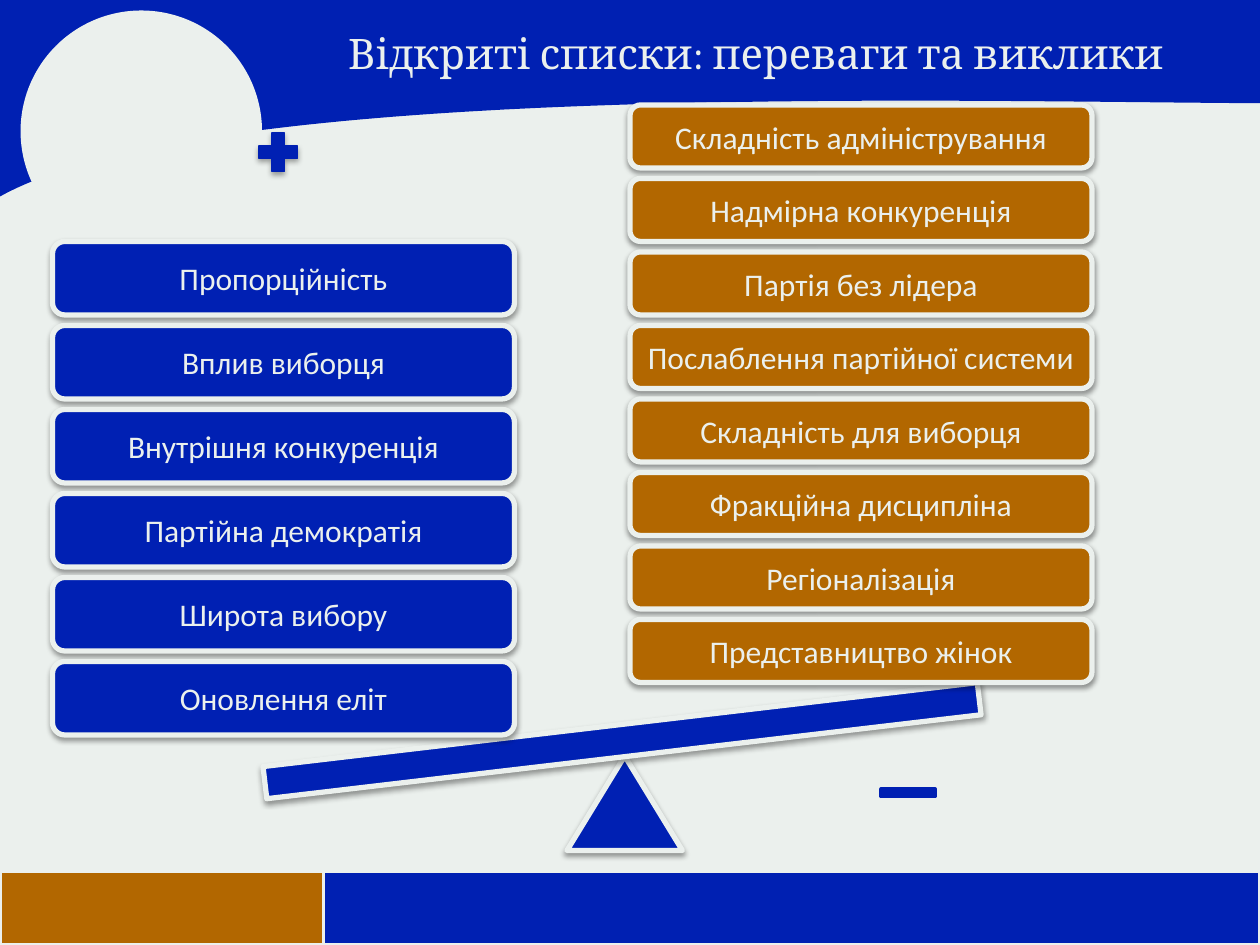
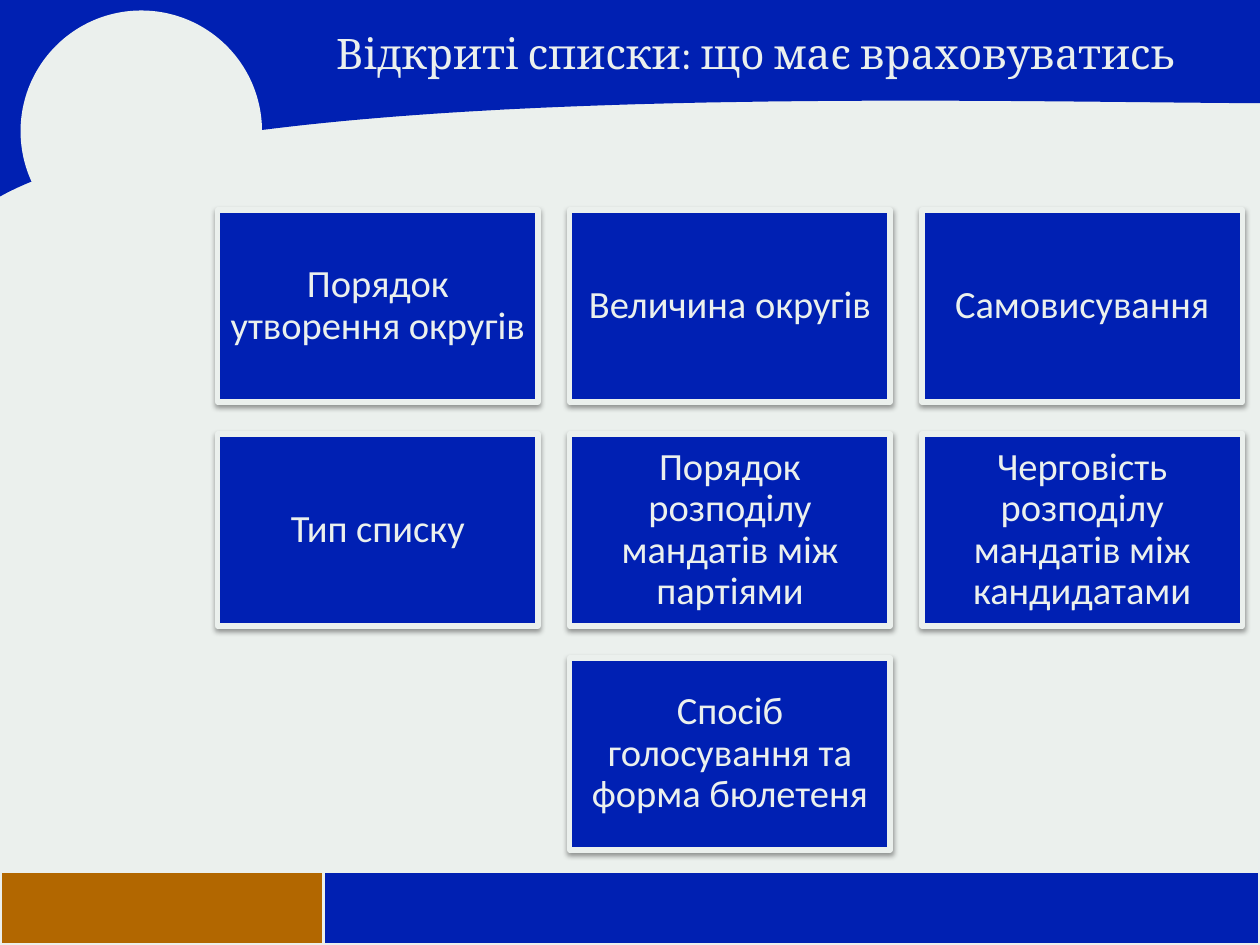
from lxml import etree
from pptx import Presentation
from pptx import util as u
from pptx.dml.color import RGBColor
from pptx.enum import shapes, text
from pptx.oxml.ns import qn

Pt = u.Pt
KIND = shapes.MSO_SHAPE

COLORS = {
    "paper": "EBF0ED",
    "band": "0020B2",
    "blue": "0020B3",
    "ochre": "B26700",
    "shadow": "000000",
}
TITLE_FONT, BODY_FONT = "Cambria", "Calibri"
WIDTH, HEIGHT = 720, 540

BALANCE_TITLE = "Відкриті списки: переваги та виклики"
ADVANTAGES = [
    "Пропорційність",
    "Вплив виборця",
    "Внутрішня конкуренція",
    "Партійна демократія",
    "Широта вибору",
    "Оновлення еліт",
]
CHALLENGES = [
    "Складність адміністрування",
    "Надмірна конкуренція",
    "Партія без лідера",
    "Послаблення партійної системи",
    "Складність для виборця",
    "Фракційна дисципліна",
    "Регіоналізація",
    "Представництво жінок",
]

FACTORS_TITLE = "Відкриті списки: що має враховуватись"
FACTOR_ROWS = [
    ["Порядок утворення округів", "Величина округів", "Самовисування"],
    ["Тип списку", "Порядок розподілу мандатів між партіями",
     "Черговість розподілу мандатів між кандидатами"],
    ["Спосіб голосування та форма бюлетеня"],
]


def rgb(name):
    return RGBColor.from_string(COLORS[name])


def paint(shape, fill, line=None, weight=0):
    shape.shadow.inherit = False
    shape.fill.solid()
    shape.fill.fore_color.rgb = rgb(fill)
    if line:
        shape.line.color.rgb = rgb(line)
        shape.line.width = Pt(weight)
    else:
        shape.line.fill.background()
    return shape


def add_block(slide, kind, box, fill, line=None, weight=0):
    shape = slide.shapes.add_shape(kind, *map(Pt, box))
    return paint(shape, fill, line, weight)


def cast_shadow(shape, alpha=38, distance=1.6):
    effects = shape._element.spPr.find(qn("a:effectLst"))
    outer = etree.SubElement(
        effects, qn("a:outerShdw"), blurRad=str(Pt(3.1)),
        dist=str(Pt(distance)), dir="5400000", rotWithShape="0")
    color = etree.SubElement(outer, qn("a:srgbClr"), val=COLORS["shadow"])
    etree.SubElement(color, qn("a:alpha"), val=str(alpha * 1000))
    return shape


def add_raised(slide, kind, box, fill):
    return cast_shadow(add_block(slide, kind, box, fill, "paper", 3))


def write(shape, words, font, size, spacing=None):
    frame = shape.text_frame
    frame.word_wrap = True
    frame.vertical_anchor = text.MSO_ANCHOR.MIDDLE
    paragraph = frame.paragraphs[0]
    paragraph.text = words
    paragraph.alignment = text.PP_ALIGN.CENTER
    if spacing:
        paragraph.line_spacing = spacing
    paragraph.font.name = font
    paragraph.font.size = Pt(size)
    paragraph.font.color.rgb = rgb("paper")


def add_header(slide):
    start, pull_a, pull_b, end = (720, 59), (551.5, 58.3), (120.2, 45.4), (0, 112.3)
    steps = 80
    curve = []
    for step in range(steps + 1):
        t = step / steps
        s = 1 - t
        curve.append(tuple(
            Pt(s**3 * a + 3 * s * s * t * b + 3 * s * t * t * c + t**3 * d)
            for a, b, c, d in zip(start, pull_a, pull_b, end)))
    outline = slide.shapes.build_freeform(0, 0)
    outline.add_line_segments([(Pt(WIDTH), 0)] + curve, close=True)
    paint(outline.convert_to_shape(), "band")


def add_themed_slide(deck, title):
    slide = deck.slides.add_slide(deck.slide_layouts[6])
    slide.background.fill.solid()
    slide.background.fill.fore_color.rgb = rgb("paper")
    add_block(slide, KIND.RECTANGLE, (0, 498, 185.5, 42), "ochre", "paper", 2)
    add_block(slide, KIND.RECTANGLE, (185, 498, 535, 42), "band", "paper", 2)
    add_header(slide)
    add_block(slide, KIND.OVAL, (11.75, 6, 138, 138), "paper")
    heading = slide.shapes.add_textbox(*map(Pt, (156, -12, 552, 84)))
    write(heading, title, TITLE_FONT, 24)
    return slide


def add_stack(slide, items, left, top, height, fill):
    for index, item in enumerate(items):
        box = (left, top + index * (height + 6), 264, height)
        plate = add_raised(slide, KIND.ROUNDED_RECTANGLE, box, fill)
        write(plate, item, BODY_FONT, 18)


def build_balance(deck):
    slide = add_themed_slide(deck, BALANCE_TITLE)
    add_raised(slide, KIND.ISOSCELES_TRIANGLE, (324, 432, 66, 54), "blue")
    beam = add_raised(slide, KIND.RECTANGLE, (150, 414, 411, 18.5), "blue")
    beam.rotation = -6.7
    add_stack(slide, ADVANTAGES, 30, 138, 42, "blue")
    add_stack(slide, CHALLENGES, 360, 60, 36, "ochre")
    plus = add_block(slide, KIND.MATH_PLUS, (144, 72, 30, 30), "blue", "blue", 0.75)
    cast_shadow(plus, 35, 1.8)
    add_block(slide, KIND.MATH_MINUS, (498, 444, 42, 18), "blue", "blue", 2)


def build_factors(deck):
    slide = add_themed_slide(deck, FACTORS_TITLE)
    left, top, width, height, gap = 124.4, 120, 183, 109.75, 18.25
    columns = max(map(len, FACTOR_ROWS))
    for row, factors in enumerate(FACTOR_ROWS):
        indent = (columns - len(factors)) * (width + gap) / 2
        for column, factor in enumerate(factors):
            box = (left + indent + column * (width + gap),
                   top + row * (height + gap), width, height)
            card = add_raised(slide, KIND.RECTANGLE, box, "blue")
            write(card, factor, BODY_FONT, 22, 0.9)
            frame = card.text_frame
            frame.margin_left = frame.margin_right = Pt(6.6)
            frame.margin_top = frame.margin_bottom = Pt(6.6)


def main():
    deck = Presentation()
    deck.slide_width, deck.slide_height = Pt(WIDTH), Pt(HEIGHT)
    build_balance(deck)
    build_factors(deck)
    deck.save("out.pptx")


if __name__ == "__main__":
    main()
